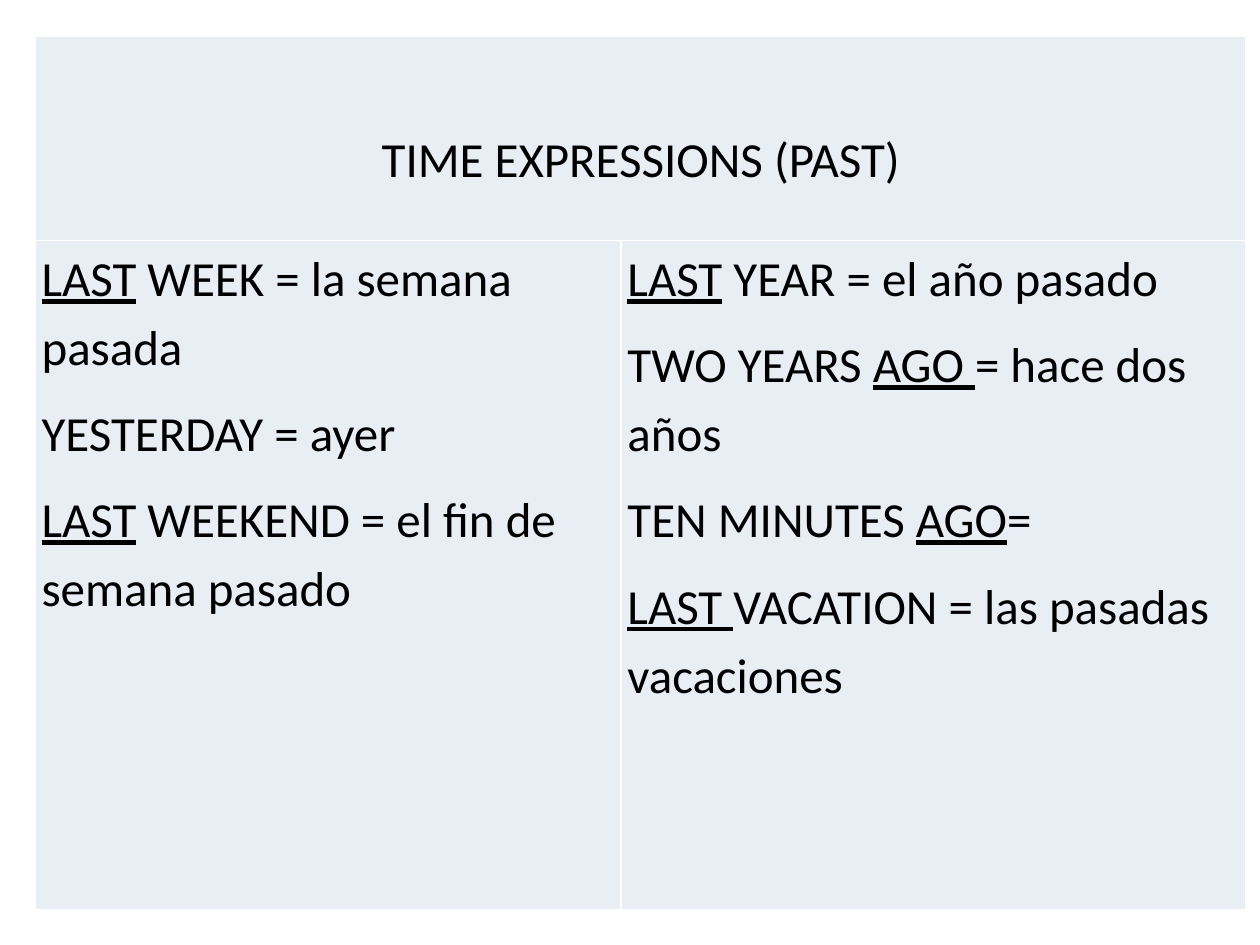
from lxml import etree
from pptx import Presentation
from pptx.dml.color import RGBColor
from pptx.enum.text import PP_ALIGN
from pptx.oxml.ns import qn
from pptx.util import Inches, Pt

LEFT, CENTER = PP_ALIGN.LEFT, PP_ALIGN.CENTER
FILL, INK, RULE = "E9EDF4", "000000", "FFFFFF"
BLANK_LAYOUT = 6

TITLE = "TIME EXPRESSIONS (PAST)"
EXPRESSIONS = [
    [
        "_LAST_ WEEK = la semana pasada",
        "YESTERDAY = ayer",
        "_LAST_ WEEKEND = el fin de semana pasado",
    ],
    [
        "_LAST_ YEAR = el año pasado",
        "TWO YEARS _AGO _= hace dos años",
        "TEN MINUTES _AGO_=",
        "_LAST _VACATION = las pasadas vacaciones",
    ],
]


def color(value):
    return RGBColor.from_string(value)


def write(p, text, size=28, font="Calibri", ink=INK, align=LEFT):
    p.alignment = align
    p.line_spacing = 1.15
    p.space_after = Pt(10)
    for i, part in enumerate(text.split("_")):
        if part:
            r = p.add_run()
            r.text = part
            r.font.size = Pt(size)
            r.font.name = font
            r.font.color.rgb = color(ink)
            r.font.underline = i % 2 == 1


def style_cell(cell):
    cell.margin_left = cell.margin_right = Inches(0.05)
    cell.margin_top = cell.margin_bottom = 0
    tc_pr = cell._tc.get_or_add_tcPr()
    for side in ("lnL", "lnR", "lnT", "lnB"):
        ln = etree.SubElement(tc_pr, qn(f"a:{side}"), w=str(Pt(1)))
        fill = etree.SubElement(ln, qn("a:solidFill"))
        etree.SubElement(fill, qn("a:srgbClr"), val=RULE)
    cell.fill.solid()
    cell.fill.fore_color.rgb = color(FILL)


def fill_cell(cell, lines, **fmt):
    tf = cell.text_frame
    for i, line in enumerate(lines):
        p = tf.add_paragraph() if i else tf.paragraphs[0]
        write(p, line, **fmt)


def add_expressions_table(slide, left, top, width, height):
    table = slide.shapes.add_table(2, 2, left, top, width, height).table
    table.first_row = table.horz_banding = False
    table.columns[0].width = Inches(4.65)
    table.columns[1].width = width - Inches(4.65)
    table.rows[0].height = Inches(1.62)
    table.rows[1].height = height - Inches(1.62)
    for cell in table.iter_cells():
        style_cell(cell)

    title = table.cell(0, 0)
    title.merge(table.cell(0, 1))
    title.margin_top = Inches(0.68)
    fill_cell(title, [TITLE], align=CENTER)
    for col, lines in enumerate(EXPRESSIONS):
        fill_cell(table.cell(1, col), lines)


def main():
    prs = Presentation()
    prs.slide_width, prs.slide_height = Inches(10), Inches(7.5)
    slide = prs.slides.add_slide(prs.slide_layouts[BLANK_LAYOUT])
    add_expressions_table(slide, Inches(0.28), Inches(0.29), Inches(9.61), Inches(6.93))
    prs.save("out.pptx")


if __name__ == "__main__":
    main()
